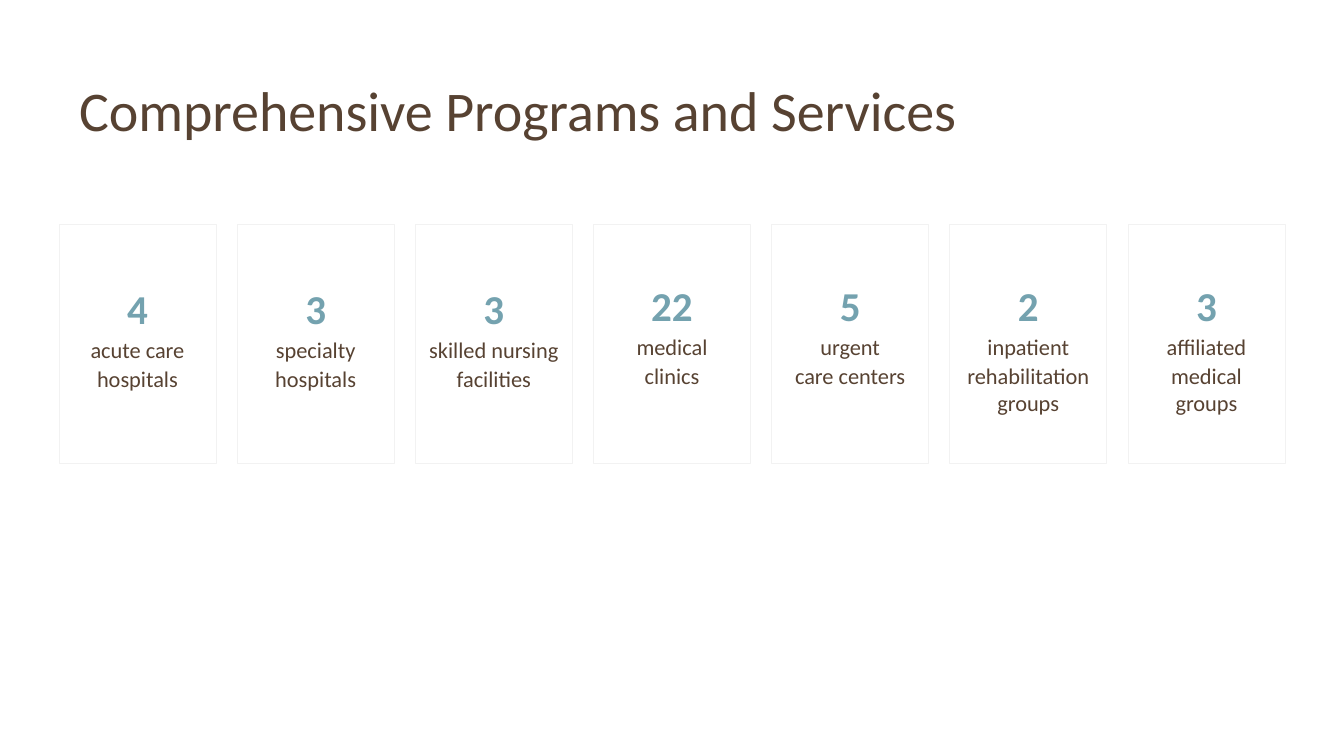
import dataclasses

import pptx
import pptx.dml.color
import pptx.enum.shapes
import pptx.enum.text
import pptx.util

PX = 914400 / 100.8
ALIGN = pptx.enum.text.PP_ALIGN


@dataclasses.dataclass(frozen=True)
class Theme:
    font: str = "Calibri"
    text: str = "574232"
    accent: str = "74A2AF"
    card: str = "FFFFFF"
    border: str = "F2F2F2"
    title_size: float = 40
    number_size: float = 29.3
    label_size: float = 16
    border_width: float = 0.5


THEME = Theme()

# Number, top of its text, then one (label paragraph, line spacing) pair per paragraph.
SERVICES = [
    ("4", 274, [("acute care hospitals", 1.1)]),
    ("3", 274, [("specialty\vhospitals", 1.1)]),
    ("3", 274, [("skilled nursing facilities", 1.1)]),
    ("22", 271, [("medical", 1.1), ("clinics", 1.1)]),
    ("5", 271, [("urgent\vcare centers", 1.1)]),
    ("2", 271, [("inpatient\vrehabilitation", 1.1), ("groups", 1.0)]),
    ("3", 271, [("affiliated\vmedical", 1.1), ("groups", 1.0)]),
]


def emu(*lengths):
    return [round(length * PX) for length in lengths]


def color(value):
    return pptx.dml.color.RGBColor.from_string(value)


def write(paragraph, text, size, ink, spacing, alignment, bold=False):
    paragraph.text = text
    paragraph.alignment = alignment
    paragraph.line_spacing = spacing
    for run in paragraph.runs:
        run.font.name = THEME.font
        run.font.size = pptx.util.Pt(size)
        run.font.bold = bold
        run.font.color.rgb = color(ink)


def place_title(slide, text, left, top, width, height):
    title = slide.shapes.title
    title.left, title.top, title.width, title.height = emu(left, top, width, height)
    title.text_frame.vertical_anchor = pptx.enum.text.MSO_ANCHOR.MIDDLE
    write(title.text_frame.paragraphs[0], text, THEME.title_size, THEME.text, 0.9, ALIGN.LEFT)


def add_card(slide, service, left, top, width, height):
    number, text_top, labels = service
    card = slide.shapes.add_shape(
        pptx.enum.shapes.MSO_SHAPE.RECTANGLE, *emu(left, top, width, height))
    card.shadow.inherit = False
    card.fill.solid()
    card.fill.fore_color.rgb = color(THEME.card)
    card.line.color.rgb = color(THEME.border)
    card.line.width = pptx.util.Pt(THEME.border_width)

    three_lines = labels[-1][0] == "groups"
    overhang, text_height = (0, 152) if three_lines else (8, 125)
    box = slide.shapes.add_textbox(
        *emu(left - overhang, text_top, width + 2 * overhang, text_height))
    frame = box.text_frame
    frame.word_wrap = True
    frame.auto_size = pptx.enum.text.MSO_AUTO_SIZE.SHAPE_TO_FIT_TEXT
    write(frame.paragraphs[0], number, THEME.number_size, THEME.accent, 1.1, ALIGN.CENTER, True)
    for label, spacing in labels:
        write(frame.add_paragraph(), label, THEME.label_size, THEME.text, spacing, ALIGN.CENTER)


def add_card_row(slide, services, left, top, width, height, card_width):
    pitch = (width - card_width) / (len(services) - 1)
    for index, service in enumerate(services):
        add_card(slide, service, left + index * pitch, top, card_width, height)


def main():
    presentation = pptx.Presentation()
    presentation.slide_width, presentation.slide_height = emu(1344, 756)
    slide = presentation.slides.add_slide(presentation.slide_layouts.get_by_name("Title Only"))
    place_title(slide, "Comprehensive Programs and Services", 69, 40, 1159, 146)
    add_card_row(slide, SERVICES, 59, 224, 1226, 239, card_width=157)
    presentation.save("out.pptx")


if __name__ == "__main__":
    main()
